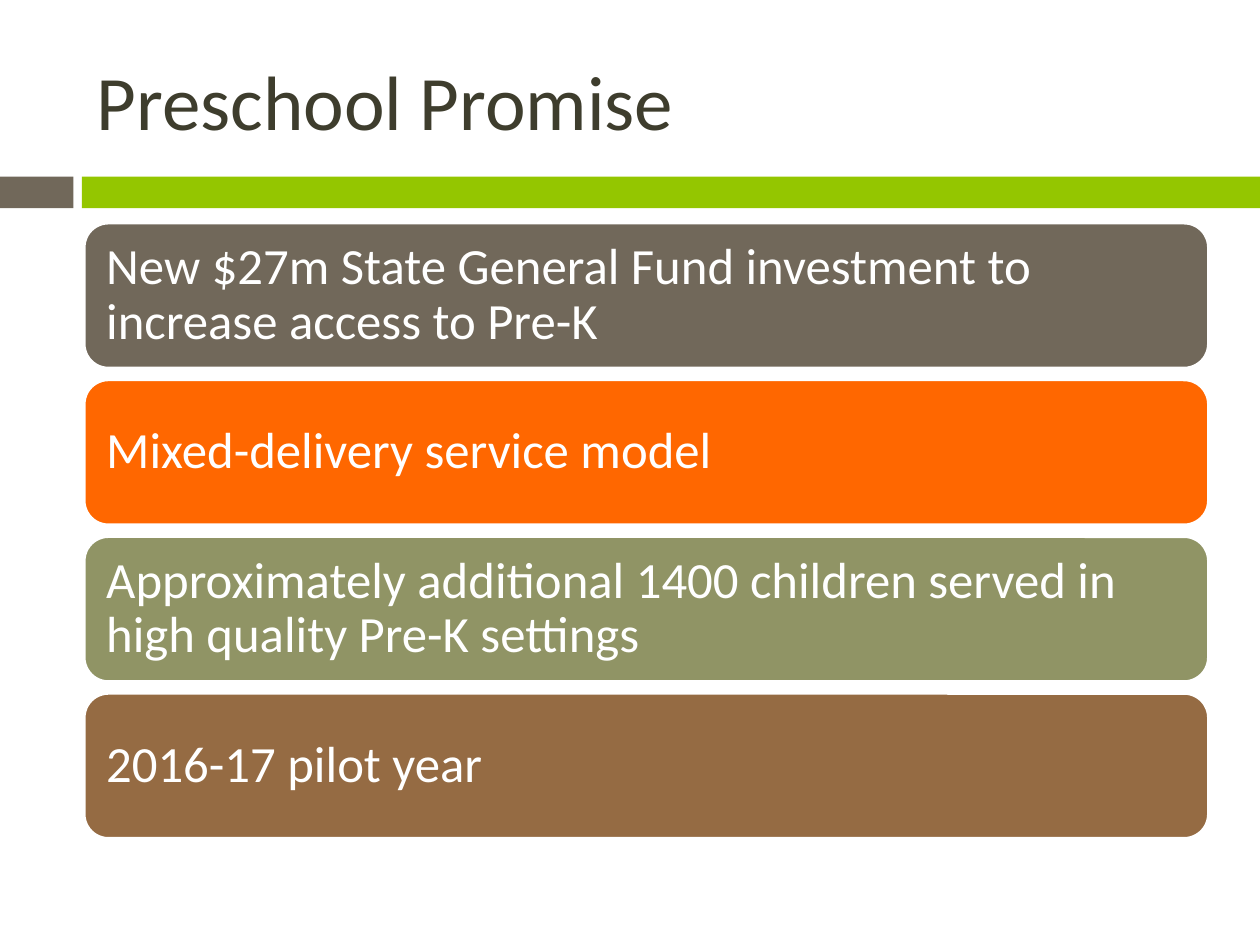
from dataclasses import dataclass

from pptx import Presentation
from pptx import util as u
from pptx.dml.color import RGBColor
from pptx.enum import shapes, text

WHITE = RGBColor(0xFF, 0xFF, 0xFF)
INK = RGBColor(0x3E, 0x3D, 0x2D)
TAUPE = RGBColor(0x71, 0x68, 0x5A)
GREEN = RGBColor(0x94, 0xC6, 0x00)
ORANGE = RGBColor(0xFF, 0x67, 0x00)
OLIVE = RGBColor(0x90, 0x94, 0x65)
BROWN = RGBColor(0x95, 0x6B, 0x43)

FONT = "Calibri"
LEFT, WIDTH = 1.7, 22.66
CARD_TOP, CARD_HEIGHT, CARD_PITCH = 4.5, 2.92, 3.16
BAND_TOP, BAND_HEIGHT = 3.56, 0.64


@dataclass(frozen=True)
class Band:
    left: float
    width: float
    color: RGBColor


@dataclass(frozen=True)
class Card:
    label: str
    color: RGBColor


BANDS = [Band(0, 1.48, TAUPE), Band(1.65, 23.75, GREEN)]
CARDS = [
    Card("New $27m State General Fund investment to increase access to Pre-K", TAUPE),
    Card("Mixed-delivery service model", ORANGE),
    Card("Approximately additional 1400 children served in high quality Pre-K settings", OLIVE),
    Card("2016-17 pilot year", BROWN),
]


def write(sp, label: str, size: float, color: RGBColor) -> None:
    tf = sp.text_frame
    tf.word_wrap = True
    tf.vertical_anchor = text.MSO_ANCHOR.MIDDLE
    p = tf.paragraphs[0]
    p.alignment = text.PP_ALIGN.LEFT
    r = p.add_run()
    r.text = label
    r.font.name = FONT
    r.font.size = u.Pt(size)
    r.font.color.rgb = color


def add_block(s, kind, left: float, top: float, width: float, height: float, color: RGBColor):
    sp = s.shapes.add_shape(kind, u.Cm(left), u.Cm(top), u.Cm(width), u.Cm(height))
    sp.shadow.inherit = False
    sp.fill.solid()
    sp.fill.fore_color.rgb = color
    sp.line.fill.background()
    return sp


def add_band(s, band: Band) -> None:
    add_block(s, shapes.MSO_SHAPE.RECTANGLE, band.left, BAND_TOP,
              band.width, BAND_HEIGHT, band.color)


def add_card(s, card: Card, top: float) -> None:
    sp = add_block(s, shapes.MSO_SHAPE.ROUNDED_RECTANGLE, LEFT, top,
                   WIDTH, CARD_HEIGHT, card.color)
    sp.line.color.rgb = WHITE
    sp.line.width = u.Pt(1.5)
    tf = sp.text_frame
    tf.margin_left = tf.margin_right = tf.margin_top = tf.margin_bottom = u.Cm(0.3)
    write(sp, card.label, 29, WHITE)
    tf.paragraphs[0].line_spacing = 0.9


def main() -> None:
    """Build the Preschool Promise slide."""
    prs = Presentation()
    prs.slide_width, prs.slide_height = u.Cm(25.4), u.Cm(19.05)
    s = prs.slides.add_slide(prs.slide_layouts[6])
    for band in BANDS:
        add_band(s, band)
    title = s.shapes.add_textbox(u.Cm(LEFT), u.Cm(0.64), u.Cm(WIDTH), u.Cm(2.75))
    write(title, "Preschool Promise", 44, INK)
    for i, card in enumerate(CARDS):
        add_card(s, card, CARD_TOP + i * CARD_PITCH)
    prs.save("out.pptx")


if __name__ == "__main__":
    main()
